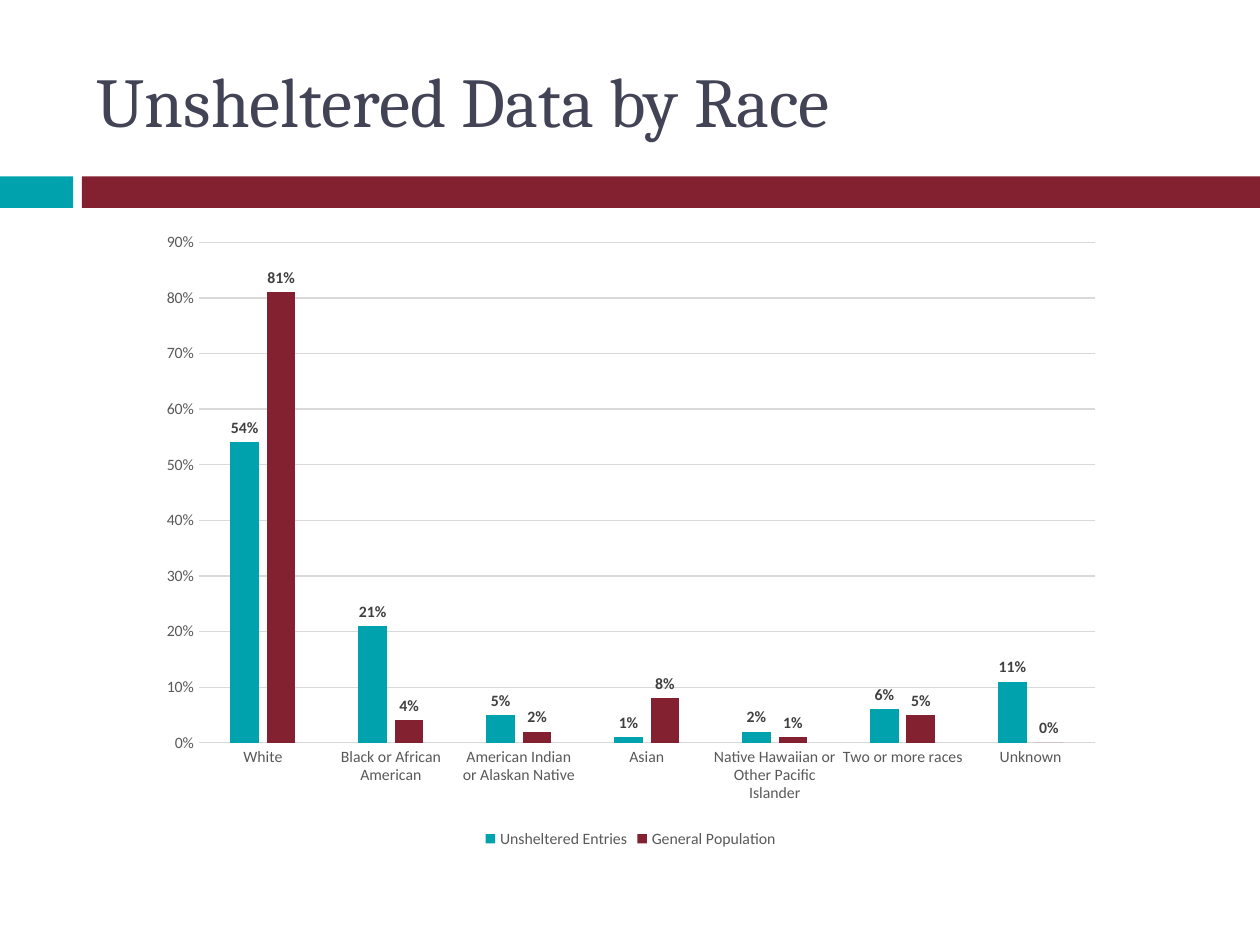
"""Build the slide on unsheltered data by race."""
from dataclasses import dataclass

from pptx import Presentation
from pptx.chart.data import CategoryChartData
from pptx.dml.color import RGBColor
from pptx.enum import chart as chart_enum, shapes, text
from pptx.util import Inches, Pt


@dataclass(frozen=True)
class Theme:
    """Colours, fonts and type sizes of the slide."""
    teal: str = "00A3AD"
    maroon: str = "832131"
    title: str = "424456"
    axis_text: str = "595959"
    label_text: str = "404040"
    grid: str = "D9D9D9"
    title_font: str = "Cambria"
    chart_font: str = "Calibri"
    title_size: int = 40
    chart_size: int = 9
    line_width: float = 0.75


THEME = Theme()
CATEGORIES = [
    "White",
    "Black or African American",
    "American Indian or Alaskan Native",
    "Asian",
    "Native Hawaiian or Other Pacific Islander",
    "Two or more races",
    "Unknown",
]
SERIES = [
    ("Unsheltered Entries", THEME.teal, [0.54, 0.21, 0.05, 0.01, 0.02, 0.06, 0.11]),
    ("General Population", THEME.maroon, [0.81, 0.04, 0.02, 0.08, 0.01, 0.05, 0]),
]


def style_font(font, name, size, color, bold=False):
    """Set the face, size, colour and weight of a font."""
    font.name = name
    font.size = Pt(size)
    font.bold = bold
    font.color.rgb = RGBColor.from_string(color)


def style_chart_font(font, color=THEME.axis_text, bold=False):
    """Give a chart part the common chart type."""
    style_font(font, THEME.chart_font, THEME.chart_size, color, bold)


def style_line(line):
    """Draw a thin grey chart line."""
    line.color.rgb = RGBColor.from_string(THEME.grid)
    line.width = Pt(THEME.line_width)


def add_band(slide, left, width, color):
    """Add one piece of the band below the title."""
    band = slide.shapes.add_shape(
        shapes.MSO_SHAPE.RECTANGLE, Inches(left), Inches(1.4), Inches(width), Inches(0.25))
    band.shadow.inherit = False
    band.fill.solid()
    band.fill.fore_color.rgb = RGBColor.from_string(color)
    band.line.fill.background()


def add_title(slide, wording):
    """Add the slide title."""
    box = slide.shapes.add_textbox(Inches(0.67), Inches(0.25), Inches(8.92), Inches(1.08))
    frame = box.text_frame
    frame.word_wrap = True
    frame.vertical_anchor = text.MSO_ANCHOR.MIDDLE
    run = frame.paragraphs[0].add_run()
    run.text = wording
    style_font(run.font, THEME.title_font, THEME.title_size, THEME.title)


def style_axes(chart):
    """Format the category and value axes."""
    for axis in (chart.category_axis, chart.value_axis):
        axis.major_tick_mark = axis.minor_tick_mark = chart_enum.XL_TICK_MARK.NONE
        style_chart_font(axis.tick_labels.font)
    chart.category_axis.has_major_gridlines = False
    style_line(chart.category_axis.format.line)
    values = chart.value_axis
    values.minimum_scale, values.maximum_scale, values.major_unit = 0, 0.9, 0.1
    values.tick_labels.number_format = "0%"
    values.tick_labels.number_format_is_linked = False
    values.format.line.fill.background()
    values.has_major_gridlines = True
    style_line(values.major_gridlines.format.line)


def style_series(series, color):
    """Colour one series and label its columns."""
    series.invert_if_negative = False
    series.format.fill.solid()
    series.format.fill.fore_color.rgb = RGBColor.from_string(color)
    labels = series.data_labels
    labels.show_value = True
    labels.number_format = "0%"
    labels.number_format_is_linked = False
    labels.position = chart_enum.XL_LABEL_POSITION.OUTSIDE_END
    style_chart_font(labels.font, THEME.label_text, bold=True)


def add_race_chart(slide):
    """Add the clustered column chart by race."""
    data = CategoryChartData(number_format="0%")
    data.categories = CATEGORIES
    for name, _, values in SERIES:
        data.add_series(name, values)
    chart = slide.shapes.add_chart(
        chart_enum.XL_CHART_TYPE.COLUMN_CLUSTERED,
        Inches(1.17), Inches(1.75), Inches(7.67), Inches(5.02), data).chart
    chart.has_title = False
    style_chart_font(chart.font)
    style_axes(chart)
    plot = chart.plots[0]
    plot.vary_by_categories = False
    plot.gap_width = 219
    plot.overlap = -27
    for series, (_, color, _) in zip(plot.series, SERIES):
        style_series(series, color)
    chart.has_legend = True
    chart.legend.position = chart_enum.XL_LEGEND_POSITION.BOTTOM
    chart.legend.include_in_layout = False
    style_chart_font(chart.legend.font)


def main():
    """Build and save the presentation."""
    presentation = Presentation()
    presentation.slide_width = Inches(10)
    presentation.slide_height = Inches(7.5)
    slide = presentation.slides.add_slide(presentation.slide_layouts[6])
    add_band(slide, 0, 0.58, THEME.teal)
    add_band(slide, 0.65, 9.35, THEME.maroon)
    add_title(slide, "Unsheltered Data by Race")
    add_race_chart(slide)
    presentation.save("out.pptx")


if __name__ == "__main__":
    main()
